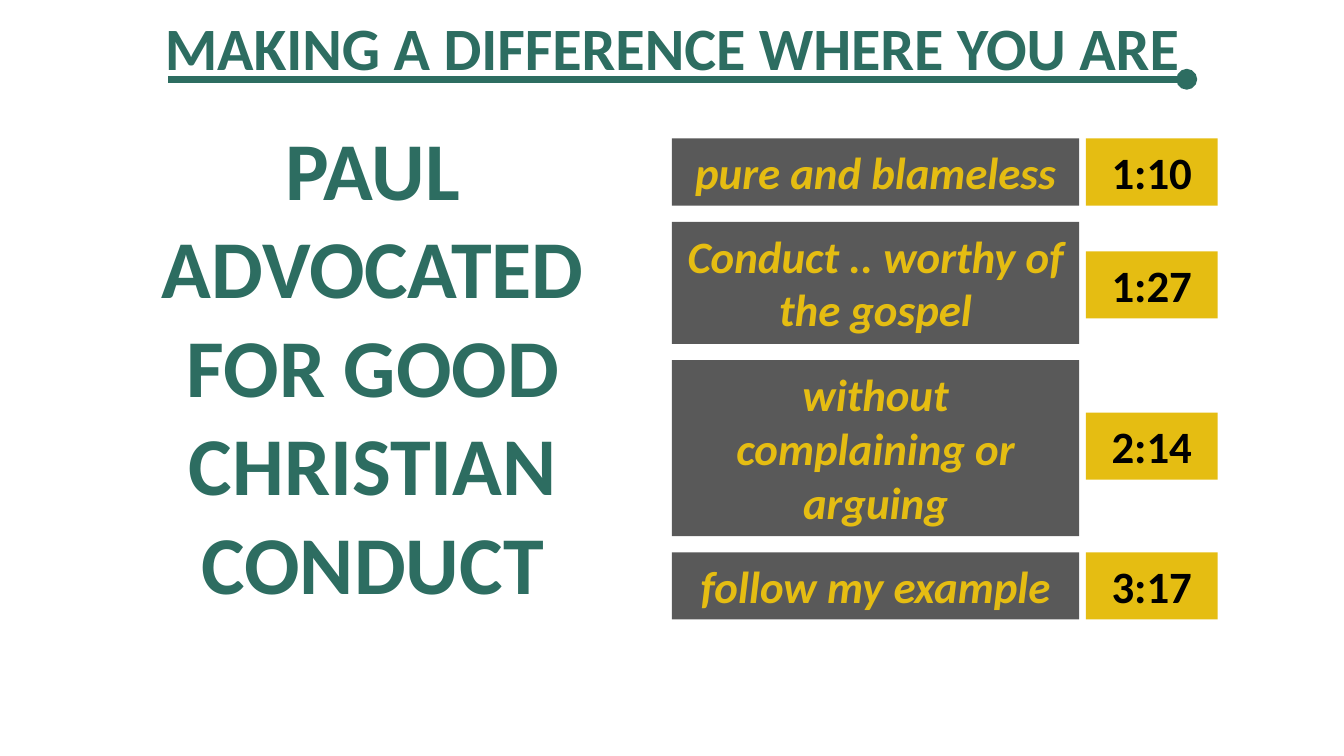
from lxml import etree
from pptx import Presentation
from pptx.dml.color import RGBColor
from pptx.enum.shapes import MSO_CONNECTOR, MSO_SHAPE
from pptx.enum.text import MSO_ANCHOR, MSO_AUTO_SIZE, PP_ALIGN
from pptx.oxml.ns import qn
from pptx.util import Inches, Pt

GREEN = RGBColor(0x2D, 0x6D, 0x61)
GRAY = RGBColor(0x59, 0x59, 0x59)
GOLD = RGBColor(0xE5, 0xBD, 0x12)
BLACK = RGBColor(0, 0, 0)
FONT = "Calibri"

# Each entry: phrase, its height, verse, drop of the verse below the phrase's top
PHRASES = [
    ("pure and blameless", 0.5, "1:10", 0),
    ("Conduct .. worthy of the gospel", 0.91, "1:27", 0.22),
    ("without complaining or arguing", 1.31, "2:14", 0.39),
    ("follow my example", 0.5, "3:17", 0),
]


def write_text(shape, text, size, color, italic=None, anchor=MSO_ANCHOR.TOP):
    frame = shape.text_frame
    frame.word_wrap = True
    frame.vertical_anchor = anchor
    paragraph = frame.paragraphs[0]
    paragraph.alignment = PP_ALIGN.CENTER
    run = paragraph.add_run()
    run.text = text
    run.font.name = FONT
    run.font.size = Pt(size)
    run.font.bold = True
    run.font.italic = italic
    run.font.color.rgb = color
    return frame


def add_title(slide, left, top, width, height):
    title = slide.shapes.title
    title.left, title.top = Inches(left), Inches(top)
    title.width, title.height = Inches(width), Inches(height)
    frame = write_text(title, "MAKING A DIFFERENCE WHERE YOU ARE", 32.2, GREEN,
                       anchor=MSO_ANCHOR.MIDDLE)
    frame.auto_size = MSO_AUTO_SIZE.NONE
    frame.paragraphs[0].line_spacing = 0.9

    # Underline with a round end
    y = Inches(top + 0.57)
    underline = slide.shapes.add_connector(
        MSO_CONNECTOR.STRAIGHT, Inches(left + 1.25), y, Inches(left + 8.83), y)
    underline.line.color.rgb = GREEN
    underline.line.width = Pt(3.75)
    properties = underline._element.spPr
    etree.SubElement(properties.find(qn("a:ln")), qn("a:tailEnd"), type="oval")
    etree.SubElement(properties, qn("a:effectLst"))


def add_statement(slide, left, top, width, height):
    box = slide.shapes.add_textbox(
        Inches(left), Inches(top), Inches(width), Inches(height))
    write_text(box, "PAUL ADVOCATED FOR GOOD CHRISTIAN CONDUCT", 44, GREEN)


def add_block(slide, left, top, width, height, text, fill, color, italic=None):
    block = slide.shapes.add_shape(
        MSO_SHAPE.RECTANGLE, Inches(left), Inches(top), Inches(width), Inches(height))
    block.shadow.inherit = False
    block.fill.solid()
    block.fill.fore_color.rgb = fill
    block.line.fill.background()
    frame = write_text(block, text, 24, color, italic)
    frame.auto_size = MSO_AUTO_SIZE.SHAPE_TO_FIT_TEXT


def add_phrases(slide, left, top, width):
    verse_width, verse_height = 0.98, 0.5
    phrase_width = width - verse_width - 0.05
    verse_left = left + width - verse_width
    for phrase, height, verse, drop in PHRASES:
        add_block(slide, left, top, phrase_width, height, phrase, GRAY, GOLD, True)
        add_block(slide, verse_left, top + drop, verse_width, verse_height,
                  verse, GOLD, BLACK)
        top += height + 0.12


def main():
    presentation = Presentation()
    # Widescreen page, 16:9
    presentation.slide_width = Inches(10)
    presentation.slide_height = Inches(10) * 9 // 16
    slide = presentation.slides.add_slide(presentation.slide_layouts[5])
    add_title(slide, 0, 0.02, 10, 0.72)
    add_phrases(slide, 5, 1.03, 4.06)
    add_statement(slide, 1.1, 0.83, 3.35, 4.21)
    presentation.save("out.pptx")


if __name__ == "__main__":
    main()
